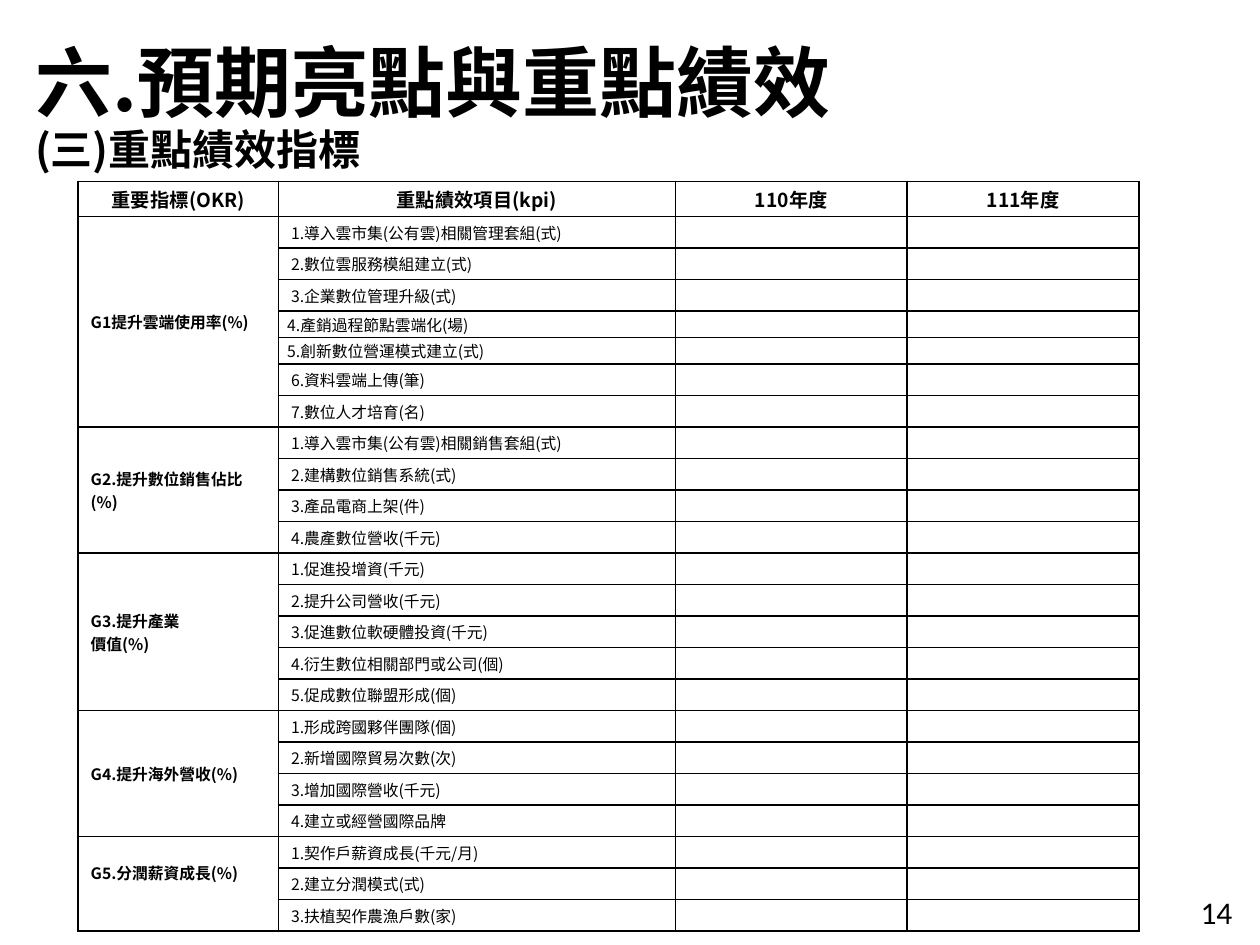
from dataclasses import dataclass
from typing import Optional

from lxml.etree import SubElement
from pptx import Presentation
from pptx.dml.color import RGBColor
from pptx.enum.text import MSO_ANCHOR, MSO_AUTO_SIZE, PP_ALIGN
from pptx.oxml.ns import qn
from pptx.util import Inches, Pt

BLACK = RGBColor(0x00, 0x00, 0x00)
CJK_FONT = "Noto Sans CJK SC"
NUMBER_FONT = "Calibri"

TABLE_LEFT, TABLE_TOP = 0.62, 1.44
COLUMN_WIDTHS = (1.59, 3.15, 1.84, 1.84)
HEADER_HEIGHT, ROW_HEIGHT, TIGHT_HEIGHT = 0.28, 0.25, 0.21
HEADER_SIZE, BODY_SIZE = 11, 9
HEADERS = ("重要指標(OKR)", "重點績效項目(kpi)", "110年度", "111年度")


@dataclass(frozen=True)
class Label:
    text: str
    left: float
    top: float
    width: float
    height: float
    size: int
    font: str = CJK_FONT
    bold: bool = True
    line_spacing: Optional[float] = None


@dataclass(frozen=True)
class Goal:
    lines: tuple
    items: tuple
    tight: tuple = ()  # positions of the low rows
    bottom: float = 0.03


LABELS = (
    Label("六.預期亮點與重點績效", 0.18, -0.14, 8.06, 1.08, 44, line_spacing=1.5),
    Label("(三)重點績效指標", 0.18, 0.93, 6.76, 0.5, 24),
    Label("14", 9.43, 7.04, 0.57, 0.4, 18, NUMBER_FONT, False),
)

GOALS = (
    Goal(("G1提升雲端使用率(%)",),
         ("導入雲市集(公有雲)相關管理套組(式)", "數位雲服務模組建立(式)",
          "企業數位管理升級(式)", "產銷過程節點雲端化(場)",
          "創新數位營運模式建立(式)", "資料雲端上傳(筆)", "數位人才培育(名)"),
         tight=(4, 5)),
    Goal(("G2.提升數位銷售佔比(%)",),
         ("導入雲市集(公有雲)相關銷售套組(式)", "建構數位銷售系統(式)",
          "產品電商上架(件)", "農產數位營收(千元)")),
    Goal(("G3.提升產業", "價值(%)"),
         ("促進投增資(千元)", "提升公司營收(千元)", "促進數位軟硬體投資(千元)",
          "衍生數位相關部門或公司(個)", "促成數位聯盟形成(個)")),
    Goal(("G4.提升海外營收(%)",),
         ("形成跨國夥伴團隊(個)", "新增國際貿易次數(次)",
          "增加國際營收(千元)", "建立或經營國際品牌")),
    Goal(("G5.分潤薪資成長(%)",),
         ("契作戶薪資成長(千元/月)", "建立分潤模式(式)", "扶植契作農漁戶數(家)"),
         bottom=0.21),
)


def add_span(para, text: str, size: int, font: str, bold: bool) -> None:
    span = para.add_run()
    span.text = text
    span.font.size = Pt(size)
    span.font.bold = bold
    span.font.name = font
    span.font.color.rgb = BLACK
    SubElement(span.font._element, qn("a:ea"), typeface=font)


def add_label(page, label: Label) -> None:
    box = page.shapes.add_textbox(Inches(label.left), Inches(label.top),
                                  Inches(label.width), Inches(label.height))
    frame = box.text_frame
    frame.word_wrap = True
    frame.auto_size = MSO_AUTO_SIZE.SHAPE_TO_FIT_TEXT
    para = frame.paragraphs[0]
    para.line_spacing = label.line_spacing
    add_span(para, label.text, label.size, label.font, label.bold)


def style_cell(cell) -> None:
    """Black one-point borders, no fill, slim margins, small empty lines."""
    cell.vertical_anchor = MSO_ANCHOR.MIDDLE
    cell.margin_top = cell.margin_bottom = Inches(0.03)
    properties = cell._tc.get_or_add_tcPr()
    for side in ("a:lnL", "a:lnR", "a:lnT", "a:lnB"):
        line = SubElement(properties, qn(side), w=str(Pt(1)))
        fill = SubElement(line, qn("a:solidFill"))
        SubElement(fill, qn("a:srgbClr"), val=str(BLACK))
    cell.fill.background()
    SubElement(cell.text_frame.paragraphs[0]._p, qn("a:endParaRPr"),
               sz=str(BODY_SIZE * 100))


def write_cell(cell, lines: tuple, size: int, bold: bool, align=None) -> None:
    frame = cell.text_frame
    for position, text in enumerate(lines):
        para = frame.add_paragraph() if position else frame.paragraphs[0]
        para.alignment = align
        add_span(para, text, size, CJK_FONT, bold)


def write_goal(table, first: int, goal: Goal) -> int:
    """Write one goal with its items and return the next free row."""
    last = first + len(goal.items) - 1
    heading = table.cell(first, 0)
    heading.merge(table.cell(last, 0))
    heading.margin_bottom = Inches(goal.bottom)
    write_cell(heading, goal.lines, BODY_SIZE, True)
    for number, item in enumerate(goal.items, start=1):
        row = first + number - 1
        cell = table.cell(row, 1)
        align = None
        if number in goal.tight:
            align = PP_ALIGN.JUSTIFY
            table.rows[row].height = Inches(TIGHT_HEIGHT)
            for neighbour in table.rows[row].cells:
                neighbour.margin_top = neighbour.margin_bottom = 0
            cell.margin_left = cell.margin_right = Inches(0.07)
        write_cell(cell, (f"{number}.{item}",), BODY_SIZE, False, align)
    return last + 1


def add_indicator_table(page) -> None:
    count = sum(len(goal.items) for goal in GOALS)
    frame = page.shapes.add_table(
        count + 1, len(COLUMN_WIDTHS), Inches(TABLE_LEFT), Inches(TABLE_TOP),
        Inches(sum(COLUMN_WIDTHS)), Inches(HEADER_HEIGHT + count * ROW_HEIGHT))
    table = frame.table
    table.first_row = table.horz_banding = False
    for column, width in zip(table.columns, COLUMN_WIDTHS):
        column.width = Inches(width)
    for row in table.rows:
        row.height = Inches(ROW_HEIGHT)
    table.rows[0].height = Inches(HEADER_HEIGHT)
    for cell in table.iter_cells():
        style_cell(cell)

    # Header row, then one block of rows per goal
    for column, text in enumerate(HEADERS):
        write_cell(table.cell(0, column), (text,), HEADER_SIZE, True, PP_ALIGN.CENTER)
    row = 1
    for goal in GOALS:
        row = write_goal(table, row, goal)


def main() -> None:
    deck = Presentation()
    deck.slide_width, deck.slide_height = Inches(10), Inches(7.5)
    page = deck.slides.add_slide(deck.slide_layouts[6])
    # Title, subtitle and page number
    for label in LABELS:
        add_label(page, label)
    add_indicator_table(page)
    deck.save("out.pptx")


if __name__ == "__main__":
    main()
